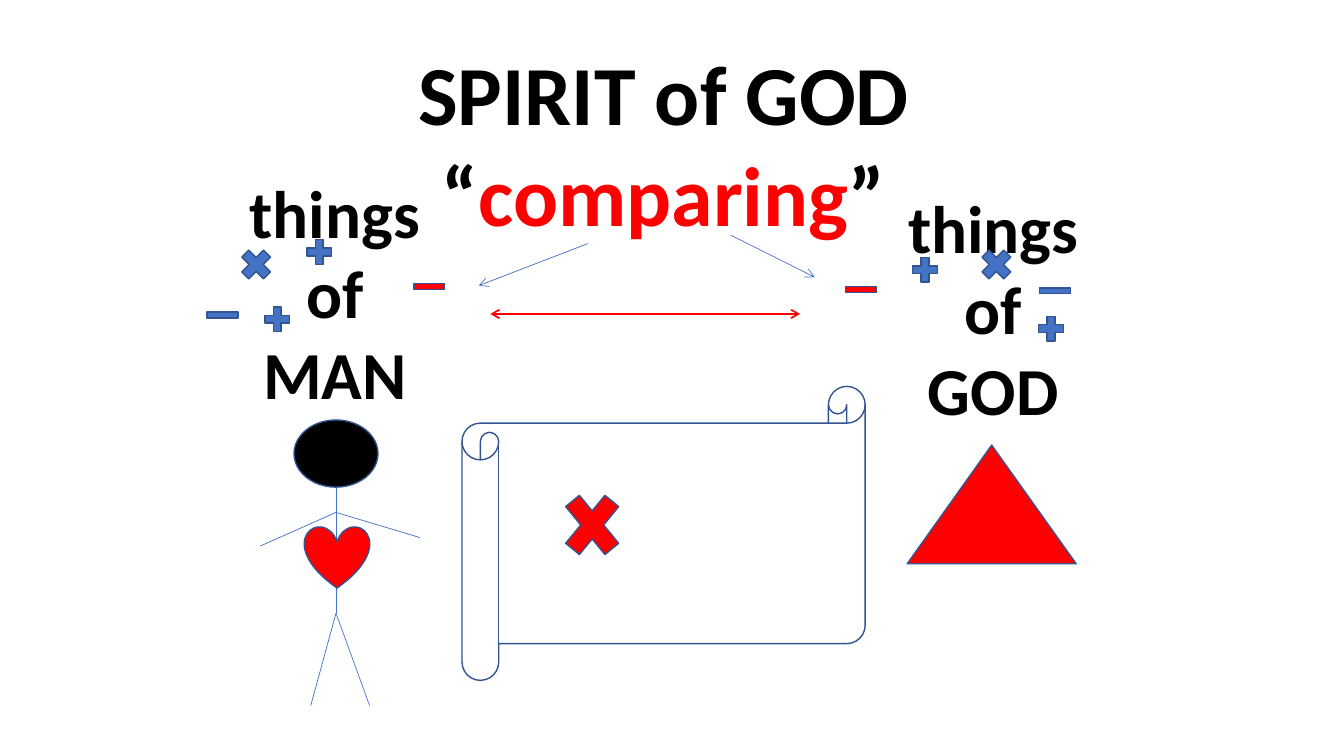
import pptx
import pptx.dml.color
import pptx.enum.shapes
import pptx.enum.text
import pptx.oxml
import pptx.oxml.ns
import pptx.util

PX = 9525
BLACK = pptx.dml.color.RGBColor(0x00, 0x00, 0x00)
RED = pptx.dml.color.RGBColor(0xFF, 0x00, 0x00)
BLUE = pptx.dml.color.RGBColor(0x44, 0x72, 0xC4)
OUTLINE = pptx.dml.color.RGBColor(0x32, 0x54, 0x91)

SHAPE = pptx.enum.shapes.MSO_SHAPE
SIGNS = {
    "plus": (SHAPE.MATH_PLUS, 32, 32),
    "times": (SHAPE.MATH_MULTIPLY, 40, 40),
    "minus": (SHAPE.MATH_MINUS, 40, 24),
}


def apply_format(target, values):
    for name, value in values.items():
        setattr(target, name, value)


def add_figure(slide, box, kind, place, fill):
    left, top, width, height = place
    lengths = (box[0] + left, box[1] + top, width, height)
    shape = slide.shapes.add_shape(kind, *(length * PX for length in lengths))
    shape.shadow.inherit = False
    if fill is None:
        shape.fill.background()
    else:
        shape.fill.solid()
        shape.fill.fore_color.rgb = fill
    shape.line.color.rgb = OUTLINE
    shape.line.width = pptx.util.Pt(1)
    return shape


def add_signs(slide, box, signs):
    for name, left, top, fill in signs:
        kind, width, height = SIGNS[name]
        add_figure(slide, box, kind, (left, top, width, height), fill)


def add_line(slide, box, start, end, color=BLUE, width=0.5, arrowheads=()):
    points = [(box[axis] + point[axis]) * PX for point in (start, end) for axis in (0, 1)]
    connector = slide.shapes.add_connector(pptx.enum.shapes.MSO_CONNECTOR.STRAIGHT, *points)
    connector.line.color.rgb = color
    connector.line.width = pptx.util.Pt(width)
    for tag in arrowheads:
        arrowhead = pptx.oxml.ns.qn(tag)
        connector.line._get_or_add_ln().append(
            connector._element.makeelement(arrowhead, {"type": "arrow"}))
    properties = connector._element.spPr
    properties.append(properties.makeelement(pptx.oxml.ns.qn("a:effectLst"), {}))


def write_text(shape, paragraphs, size):
    frame = shape.text_frame
    apply_format(frame, {
        "word_wrap": True,
        "auto_size": pptx.enum.text.MSO_AUTO_SIZE.NONE,
        "vertical_anchor": pptx.enum.text.MSO_ANCHOR.TOP,
    })
    for index, runs in enumerate(paragraphs):
        paragraph = frame.add_paragraph() if index else frame.paragraphs[0]
        paragraph.alignment = pptx.enum.text.PP_ALIGN.CENTER
        for text, color in runs:
            run = paragraph.add_run()
            run.text = text
            apply_format(run.font, {"name": "Calibri", "size": pptx.util.Pt(size), "bold": True})
            run.font.color.rgb = color


def add_label(slide, box, place, text):
    left, top, width, height = place
    lengths = (box[0] + left, box[1] + top, width, height)
    label = slide.shapes.add_textbox(*(length * PX for length in lengths))
    write_text(label, [[(text, BLACK)]], 48)


def add_god_side(slide, box):
    add_figure(slide, box, SHAPE.ISOSCELES_TRIANGLE, (64, 251, 161, 113), RED)
    add_label(slide, box, (42, 0, 208, 242), "things of GOD")
    add_signs(slide, box, [
        ("plus", 185, 124, BLUE),
        ("times", 129, 59, BLUE),
        ("minus", 185, 92, BLUE),
        ("minus", 0, 91, RED),
        ("plus", 65, 68, BLUE),
    ])


def add_man_side(slide, box):
    add_figure(slide, box, SHAPE.OVAL, (88, 242, 80, 64), BLACK)
    neck, shoulder, hip = (128, 306), (128, 330), (128, 426)
    limbs = [
        (neck, hip),
        (shoulder, (208, 354)),
        (shoulder, (56, 362)),
        (hip, (104, 514)),
        (hip, (160, 514)),
    ]
    for start, end in limbs:
        add_line(slide, box, start, end)
    add_figure(slide, box, SHAPE.HEART, (98, 343, 62, 59), RED)
    add_label(slide, box, (31, 0, 192, 242), "things of MAN")
    add_signs(slide, box, [
        ("times", 32, 74, BLUE),
        ("plus", 96, 66, BLUE),
        ("plus", 56, 130, BLUE),
        ("minus", 197, 103, RED),
        ("minus", 0, 130, BLUE),
    ])


def add_comparison(slide, box):
    title = slide.shapes.title
    left, top, width, height = box
    apply_format(title, {
        "left": left * PX, "top": top * PX, "width": width * PX, "height": height * PX,
    })
    write_text(title, [
        [("SPIRIT of GOD", BLACK)],
        [("“", BLACK), ("comparing", RED), ("”", BLACK)],
    ], 60)
    add_figure(slide, box, SHAPE.HORIZONTAL_SCROLL, (144, 333, 384, 280), None)
    add_figure(slide, box, SHAPE.MATH_MULTIPLY, (232, 421, 72, 88), RED)
    add_line(slide, box, (171, 264), (466, 264), RED, 1.25, ("a:headEnd", "a:tailEnd"))
    for start, end in [((264, 197), (160, 237)), ((400, 189), (480, 229))]:
        add_line(slide, box, start, end, arrowheads=("a:tailEnd",))


def main():
    presentation = pptx.Presentation()
    apply_format(presentation, {"slide_width": 1280 * PX, "slide_height": 720 * PX})
    slide = presentation.slides.add_slide(presentation.slide_layouts[5])
    add_god_side(slide, (800, 173))
    add_man_side(slide, (192, 158))
    add_comparison(slide, (296, 35, 672, 203))
    presentation.save("out.pptx")


if __name__ == "__main__":
    main()
